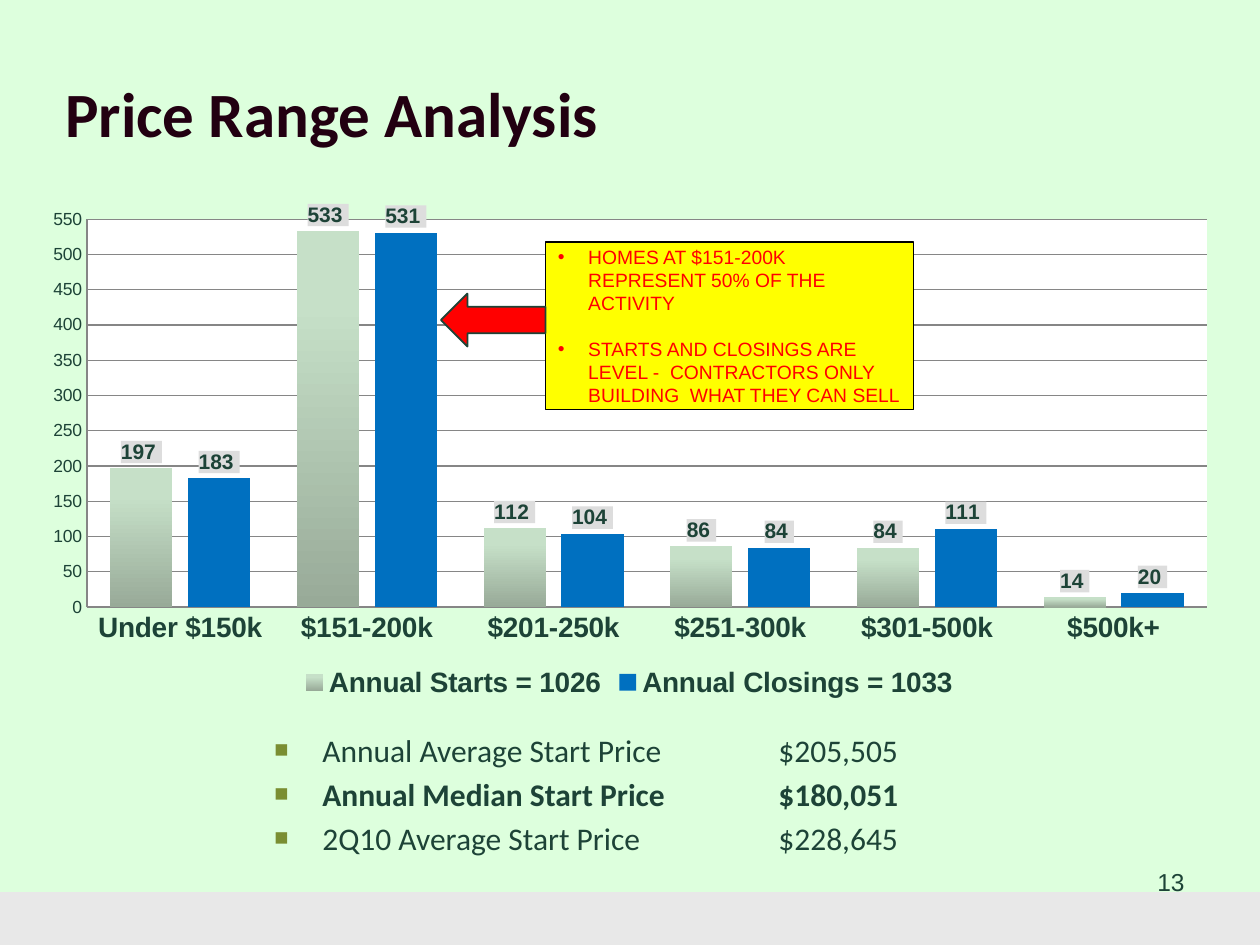
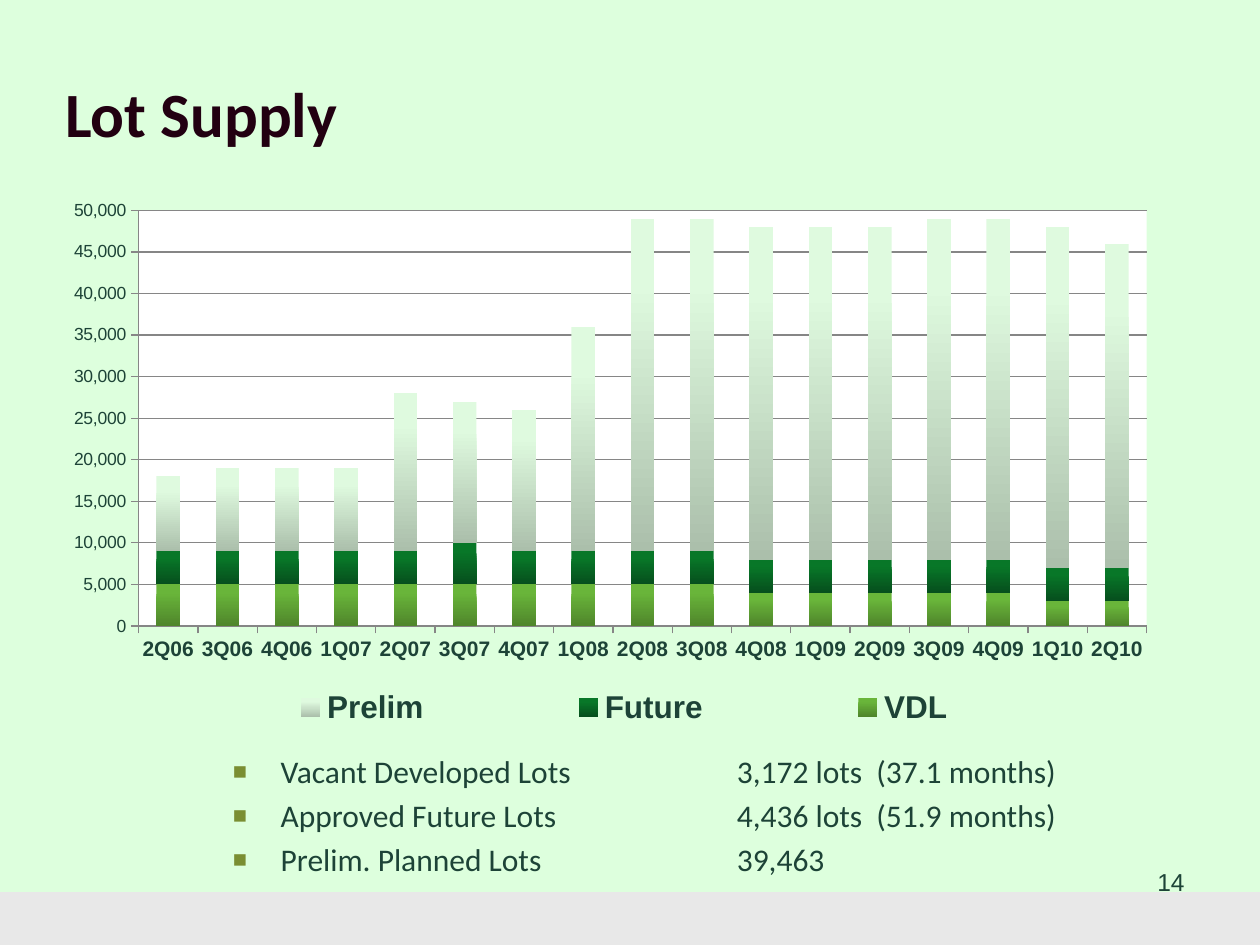
from lxml.etree import SubElement
from pptx import Presentation
from pptx.chart.data import CategoryChartData
from pptx.dml.color import RGBColor
from pptx.enum.chart import XL_CHART_TYPE, XL_LABEL_POSITION, XL_LEGEND_POSITION, XL_TICK_MARK
from pptx.enum.shapes import MSO_SHAPE
from pptx.enum.text import MSO_ANCHOR, PP_ALIGN
from pptx.oxml import parse_xml
from pptx.oxml.ns import nsdecls, qn
from pptx.util import Inches, Pt

MINT = RGBColor(0xDD, 0xFF, 0xDD)
BAND_GREY = RGBColor(0xE8, 0xE8, 0xE8)
TITLE_PLUM = RGBColor(0x22, 0x00, 0x11)
TEXT_GREEN = RGBColor(0x1D, 0x43, 0x37)
BULLET_OLIVE = RGBColor(0x7A, 0x8E, 0x32)
LABEL_GREY = RGBColor(0xDD, 0xDD, 0xDD)
GRID_GREY = RGBColor(0x86, 0x86, 0x86)
WHITE = RGBColor(0xFF, 0xFF, 0xFF)
BLACK = RGBColor(0x00, 0x00, 0x00)
RED = RGBColor(0xFF, 0x00, 0x00)
YELLOW = RGBColor(0xFF, 0xFF, 0x00)
CLOSINGS_BLUE = RGBColor(0x00, 0x70, 0xC0)
STARTS_FADE = RGBColor(0xC6, 0xE0, 0xC8), RGBColor(0x98, 0xAA, 0x98)
PRELIM_FADE = RGBColor(0xDF, 0xFA, 0xDF), RGBColor(0xAB, 0xBF, 0xAB)
FUTURE_FADE = RGBColor(0x08, 0x77, 0x28), RGBColor(0x06, 0x4F, 0x1D)
VDL_FADE = RGBColor(0x69, 0xB5, 0x3A), RGBColor(0x4F, 0x85, 0x2B)

HEADING = {"name": "Calibri", "size": Pt(36), "bold": True}
BODY = {"name": "Calibri", "size": Pt(18)}
NUMBER = {"name": "Arial", "size": Pt(14)}
CALLOUT = {"name": "Arial", "size": Pt(11)}
AXIS = {"name": "Arial", "size": Pt(10), "bold": False}

PRICE_BOX = 0.23, 1.58, 9.53, 4
LOT_BOX = 0.25, 1.58, 9.33, 4.33
PRICE_RANGES = ["Under $150k", "$151-200k", "$201-250k", "$251-300k", "$301-500k", "$500k+"]
PRICE_SERIES = [
    ("Annual Starts = 1026", [197, 533, 112, 86, 84, 14], STARTS_FADE),
    ("Annual Closings = 1033", [183, 531, 104, 84, 111, 20], CLOSINGS_BLUE),
]
QUARTERS = [f"{q % 4 + 1}Q{6 + q // 4:02d}" for q in range(1, 18)]
LOT_SERIES = [
    ("VDL", [5000] * 10 + [4000] * 5 + [3000] * 2, VDL_FADE),
    ("Future", [4000] * 5 + [5000] + [4000] * 11, FUTURE_FADE),
    ("Prelim", [9000, 10000, 10000, 10000, 19000, 17000, 17000, 27000]
     + [40000] * 5 + [41000] * 3 + [39000], PRELIM_FADE),
]


def style_font(font, color, formats):
    for name, value in formats.items():
        setattr(font, name, value)
    font.color.rgb = color


def add_bullet(p, char, indent, color=None, percent=100):
    pPr = p._p.get_or_add_pPr()
    pPr.set("marL", str(Inches(indent)))
    pPr.set("indent", str(-Inches(indent)))
    if color is not None:
        SubElement(SubElement(pPr, qn("a:buClr")), qn("a:srgbClr"), val=str(color))
    SubElement(pPr, qn("a:buSzPct"), val=str(percent * 1000))
    SubElement(pPr, qn("a:buFont"), typeface="Arial")
    SubElement(pPr, qn("a:buChar"), char=char)
    return pPr


def add_text(s, box, text, color, formats, anchor=MSO_ANCHOR.TOP, align=PP_ALIGN.LEFT):
    tf = s.shapes.add_textbox(*map(Inches, box)).text_frame
    tf.word_wrap = True
    tf.vertical_anchor = anchor
    p = tf.paragraphs[0]
    p.alignment = align
    r = p.add_run()
    r.text = text
    style_font(r.font, color, formats)


def add_block(s, kind, box, fill, line=None):
    sp = s.shapes.add_shape(kind, *map(Inches, box))
    sp.shadow.inherit = False
    sp.fill.solid()
    sp.fill.fore_color.rgb = fill
    if line is None:
        sp.line.fill.background()
    else:
        sp.line.color.rgb = line
        sp.line.width = Pt(1)
    return sp


def add_facts(s, box, facts, bold_row=None):
    tf = s.shapes.add_textbox(*map(Inches, box)).text_frame
    tf.word_wrap = True
    for i, (label, value) in enumerate(facts):
        p = tf.paragraphs[0] if i == 0 else tf.add_paragraph()
        if i:
            p.space_before = Pt(3.6)
        pPr = add_bullet(p, "■", 0.38, BULLET_OLIVE, 75)
        tabs = SubElement(pPr, qn("a:tabLst"))
        SubElement(tabs, qn("a:tab"), pos=str(Inches(4)), algn="l")
        r = p.add_run()
        r.text = f"{label}\t{value}"
        style_font(r.font, TEXT_GREEN, {**BODY, "bold": i == bold_row})


def add_callout(s, box, lines):
    sp = add_block(s, MSO_SHAPE.RECTANGLE, box, YELLOW, BLACK)
    tf = sp.text_frame
    tf.word_wrap = True
    tf.margin_right = Inches(0.05)
    tf.vertical_anchor = MSO_ANCHOR.MIDDLE
    for i, line in enumerate(lines):
        p = tf.paragraphs[0] if i == 0 else tf.add_paragraph()
        p.alignment = PP_ALIGN.LEFT
        if i:
            p.space_before = Pt(13)
        add_bullet(p, "•", 0.24)
        r = p.add_run()
        r.text = line
        style_font(r.font, RED, CALLOUT)


def solid_sppr(color):
    return parse_xml(
        f'<c:spPr {nsdecls("c", "a")}><a:solidFill><a:srgbClr val="{color}"/>'
        "</a:solidFill><a:ln><a:noFill/></a:ln></c:spPr>")


def make_layout(box, chart_box, inner=False):
    width, height = chart_box[2:]
    x, y, w, h = (part / whole for part, whole in zip(box, (width, height) * 2))
    target = '<c:layoutTarget val="inner"/>' if inner else ""
    return parse_xml(
        f'<c:layout {nsdecls("c")}><c:manualLayout>{target}'
        '<c:xMode val="edge"/><c:yMode val="edge"/>'
        f'<c:x val="{x}"/><c:y val="{y}"/><c:w val="{w}"/><c:h val="{h}"/>'
        "</c:manualLayout></c:layout>")


def drop_layout(element):
    for layout in element.findall(qn("c:layout")):
        element.remove(layout)


def fill_series(series, fill):
    area = series.format.fill
    if isinstance(fill, RGBColor):
        area.solid()
        area.fore_color.rgb = fill
        return
    area.gradient()
    area.gradient_angle = 270
    for stop, color, position in zip(area.gradient_stops, fill, (0.2, 1)):
        stop.color.rgb = color
        stop.position = position


def add_labels(series):
    labels = series.data_labels
    labels.show_value = True
    labels.position = XL_LABEL_POSITION.OUTSIDE_END
    labels.number_format = "#,##0_);[Red]\\(#,##0\\)"
    labels.number_format_is_linked = False
    style_font(labels.font, TEXT_GREEN, {**AXIS, "size": Pt(12), "bold": True})
    labels._element.find(qn("c:txPr")).addprevious(solid_sppr(LABEL_GREY))


def add_columns(s, kind, box, cats, rows, plot_box, top, step, tick, cat_size, gap, overlap):
    data = CategoryChartData()
    data.categories = cats
    for name, values, _ in rows:
        data.add_series(name, values)
    chart = s.shapes.add_chart(kind, *map(Inches, box), data).chart
    chart.has_title = False
    style_font(chart.font, TEXT_GREEN, AXIS)
    plot = chart.plots[0]
    for name, value in {"gap_width": gap, "overlap": overlap, "vary_by_categories": False}.items():
        setattr(plot, name, value)
    for series, (_, _, fill) in zip(plot.series, rows):
        fill_series(series, fill)

    values = chart.value_axis
    for name, value in {"minimum_scale": 0, "maximum_scale": top, "major_unit": step,
                        "has_major_gridlines": True}.items():
        setattr(values, name, value)
    values.tick_labels.number_format = "#,##0"
    values.tick_labels.number_format_is_linked = False
    values.major_gridlines.format.line.color.rgb = GRID_GREY
    bold = {**AXIS, "size": Pt(cat_size), "bold": True}
    for axis, formats in ((values, AXIS), (chart.category_axis, bold)):
        axis.major_tick_mark = tick
        axis.minor_tick_mark = XL_TICK_MARK.NONE
        axis.format.line.color.rgb = GRID_GREY
        style_font(axis.tick_labels.font, TEXT_GREEN, formats)

    area = chart._chartSpace.chart.plotArea
    drop_layout(area)
    area.insert(0, make_layout(plot_box, box, inner=True))
    area.append(solid_sppr(WHITE))
    return chart


def add_legend(chart, position, size, layout=None):
    chart.has_legend = True
    legend = chart.legend
    legend.position = position
    legend.include_in_layout = False
    style_font(legend.font, TEXT_GREEN, {**AXIS, "size": Pt(size), "bold": True})
    if layout is not None:
        drop_layout(legend._element)
        legend._element.find(qn("c:legendPos")).addnext(layout)


def start_slide(prs, number, title, facts_box, facts, bold_row=None):
    s = prs.slides.add_slide(prs.slide_layouts[6])
    s.background.fill.solid()
    s.background.fill.fore_color.rgb = MINT
    add_text(s, (7.17, 6.83, 2.33, 0.52), str(number), TEXT_GREEN, NUMBER, align=PP_ALIGN.RIGHT)
    add_text(s, (0.42, 0.41, 9.06, 0.96), title, TITLE_PLUM, HEADING, MSO_ANCHOR.MIDDLE)
    add_facts(s, facts_box, facts, bold_row)
    add_block(s, MSO_SHAPE.RECTANGLE, (0, 7.08, 10, 0.42), BAND_GREY)
    return s


def build_price_slide(prs):
    s = start_slide(prs, 13, "Price Range Analysis", (2.08, 5.75, 6.08, 1.42), [
        ("Annual Average Start Price", "$205,505"),
        ("Annual Median Start Price", "$180,051"),
        ("2Q10 Average Start Price", "$228,645"),
    ], bold_row=1)
    chart = add_columns(s, XL_CHART_TYPE.COLUMN_CLUSTERED, PRICE_BOX,
                        PRICE_RANGES, PRICE_SERIES, (0.46, 0.16, 8.89, 3.08),
                        550, 50, XL_TICK_MARK.NONE, 16, 75, -25)
    for series in chart.plots[0].series:
        add_labels(series)
    add_legend(chart, XL_LEGEND_POSITION.BOTTOM, 16)
    add_callout(s, (4.33, 1.92, 2.92, 1.33), [
        "HOMES AT $151-200K REPRESENT 50% OF THE ACTIVITY",
        "STARTS AND CLOSINGS ARE LEVEL -  CONTRACTORS ONLY BUILDING  WHAT THEY CAN SELL",
    ])
    add_block(s, MSO_SHAPE.LEFT_ARROW, (3.5, 2.33, 0.83, 0.42), RED, TEXT_GREEN)


def build_lot_slide(prs):
    s = start_slide(prs, 14, "Lot Supply", (1.75, 5.92, 7, 1.08), [
        ("Vacant Developed Lots", "3,172 lots  (37.1 months)"),
        ("Approved Future Lots", "4,436 lots  (51.9 months)"),
        ("Prelim. Planned Lots", "39,463"),
    ])
    chart = add_columns(s, XL_CHART_TYPE.COLUMN_STACKED, LOT_BOX,
                        QUARTERS, LOT_SERIES, (0.85, 0.09, 8, 3.3),
                        50000, 5000, XL_TICK_MARK.OUTSIDE, 12, 150, 100)
    add_legend(chart, XL_LEGEND_POSITION.RIGHT, 18,
               make_layout((0.99, 3.84, 7.43, 0.39), LOT_BOX))


def main():
    prs = Presentation()
    prs.slide_width, prs.slide_height = Inches(10), Inches(7.5)
    build_price_slide(prs)
    build_lot_slide(prs)
    prs.save("out.pptx")


if __name__ == "__main__":
    main()
